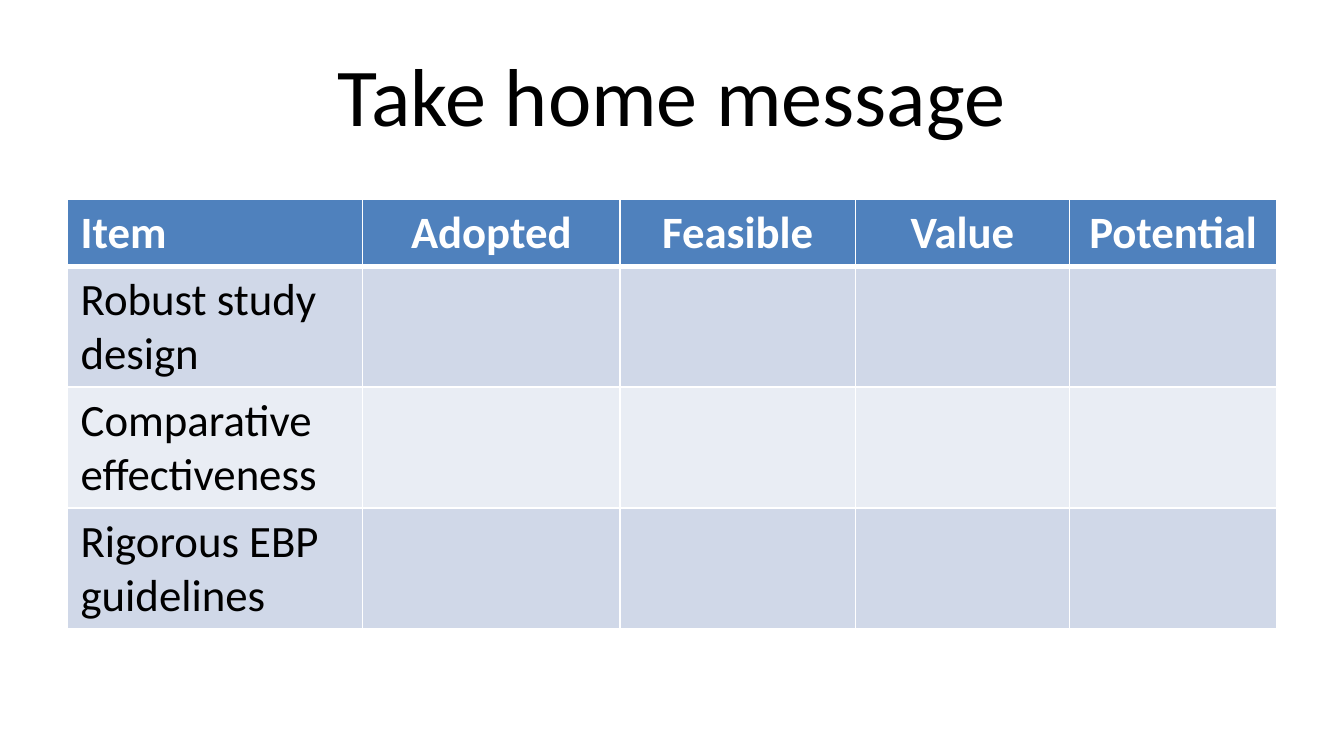
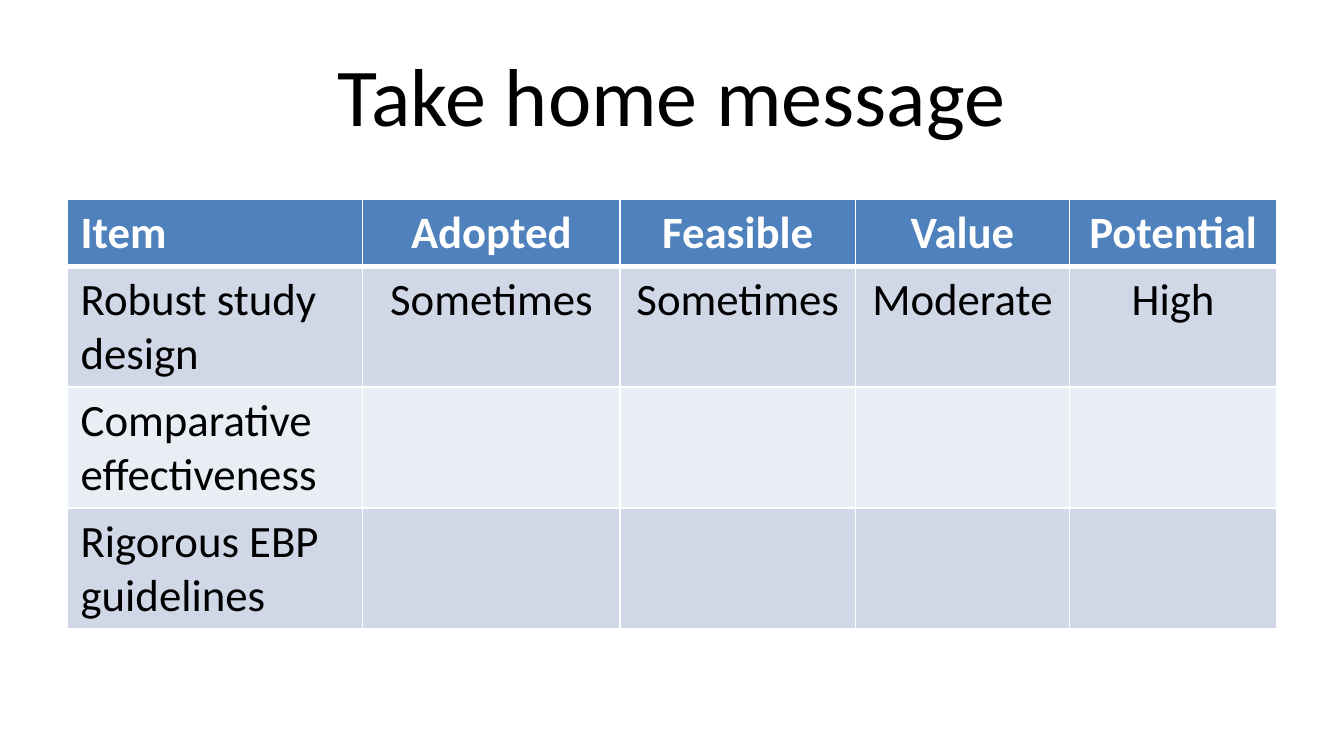
import dataclasses

import pptx
import pptx.dml.color
import pptx.enum.text
import pptx.oxml
import pptx.oxml.ns
import pptx.util

EMU_PER_PX = 9525
ALIGN = pptx.enum.text.PP_ALIGN
ANCHOR = pptx.enum.text.MSO_ANCHOR


@dataclasses.dataclass(frozen=True)
class Theme:
    font: str = "Calibri"
    title_size: int = 44
    table_size: int = 24
    ink: str = "000000"
    paper: str = "FFFFFF"
    header: str = "4F81BD"
    bands: tuple = ("D0D8E8", "E9EDF4")
    border: int = 1
    header_border: int = 3


THEME = Theme()

# Content and layout
TITLE = "Take home message"
HEADINGS = ["Item", "Adopted", "Feasible", "Value", "Potential"]
ITEMS = ["Robust study design", "Comparative effectiveness", "Rigorous EBP guidelines"]
RATINGS = {"Robust study design": ["Sometimes", "Sometimes", "Moderate", "High"]}

SLIDE_SIZE = (960, 540)
MARGIN = 48
CONTENT_WIDTH = SLIDE_SIZE[0] - 2 * MARGIN
TITLE_TOP, TITLE_HEIGHT = 22, 90
TABLE_TOP, TABLE_HEIGHT = 142, 307
COLUMN_WIDTHS = [211, 184, 168, 153, 148]
ROW_HEIGHT = 39  # minimum; rows grow to fit their text


def px(length):
    return pptx.util.Emu(length * EMU_PER_PX)


def rgb(colour):
    return pptx.dml.color.RGBColor.from_string(colour)


def write_text(frame, text, *, size, colour=THEME.ink, bold=False, align=ALIGN.LEFT):
    paragraph = frame.paragraphs[0]
    paragraph.alignment = align
    run = paragraph.add_run()
    run.text = text
    run.font.name = THEME.font
    run.font.size = pptx.util.Pt(size)
    run.font.bold = bold
    run.font.color.rgb = rgb(colour)


def add_title(slide, text):
    box = slide.shapes.add_textbox(px(MARGIN), px(TITLE_TOP), px(CONTENT_WIDTH), px(TITLE_HEIGHT))
    frame = box.text_frame
    frame.word_wrap = True
    frame.vertical_anchor = ANCHOR.MIDDLE
    write_text(frame, text, size=THEME.title_size, align=ALIGN.CENTER)


def set_borders(cell, **widths):
    # Borders must come before the fill in the cell properties
    properties = cell._tc.get_or_add_tcPr()
    for index, side in enumerate("LRTB"):
        width = pptx.util.Pt(widths.get(side, THEME.border))
        line = pptx.oxml.parse_xml(
            f'<a:ln{side} {pptx.oxml.ns.nsdecls("a")} w="{width}"><a:solidFill>'
            f'<a:srgbClr val="{THEME.paper}"/></a:solidFill></a:ln{side}>'
        )
        properties.insert(index, line)


def style_cell(cell, row):
    cell.fill.solid()
    if row == 0:
        cell.fill.fore_color.rgb = rgb(THEME.header)
        set_borders(cell, B=THEME.header_border)
    else:
        cell.fill.fore_color.rgb = rgb(THEME.bands[(row - 1) % len(THEME.bands)])
        set_borders(cell, T=THEME.header_border if row == 1 else THEME.border)


def add_ratings_table(slide, ratings):
    rows = [HEADINGS] + [[item] + ratings.get(item, [""] * 4) for item in ITEMS]
    frame = slide.shapes.add_table(
        len(rows), len(HEADINGS), px(MARGIN), px(TABLE_TOP), px(CONTENT_WIDTH), px(TABLE_HEIGHT)
    )
    table = frame.table
    table.horz_banding = False
    for column, width in zip(table.columns, COLUMN_WIDTHS):
        column.width = px(width)
    for row_index, values in enumerate(rows):
        table.rows[row_index].height = px(ROW_HEIGHT)
        is_header = row_index == 0
        for column_index, value in enumerate(values):
            cell = table.cell(row_index, column_index)
            style_cell(cell, row_index)
            if value:
                write_text(
                    cell.text_frame,
                    value,
                    size=THEME.table_size,
                    colour=THEME.paper if is_header else THEME.ink,
                    bold=is_header,
                    align=ALIGN.CENTER if column_index else ALIGN.LEFT,
                )
    frame.height = px(TABLE_HEIGHT)


def add_message_slide(presentation, ratings):
    slide = presentation.slides.add_slide(presentation.slide_layouts[6])
    slide.background.fill.solid()
    slide.background.fill.fore_color.rgb = rgb(THEME.paper)
    add_title(slide, TITLE)
    add_ratings_table(slide, ratings)


def main():
    presentation = pptx.Presentation()
    presentation.slide_width, presentation.slide_height = map(px, SLIDE_SIZE)
    # The same table, first unrated, then with the first item rated
    for ratings in ({}, RATINGS):
        add_message_slide(presentation, ratings)
    presentation.save("out.pptx")


if __name__ == "__main__":
    main()
